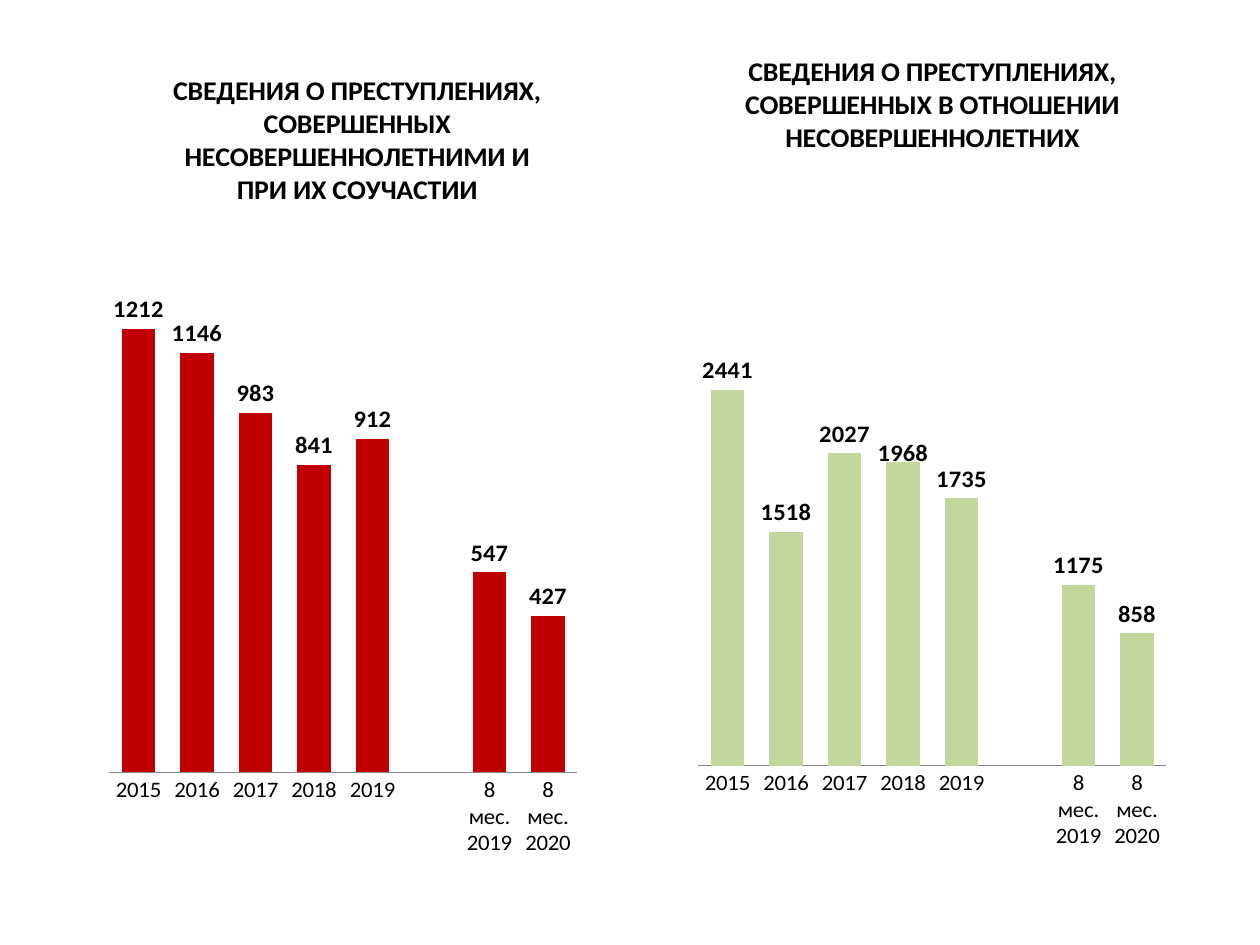
from dataclasses import dataclass
from typing import Optional

from lxml import etree
from pptx import Presentation
from pptx.chart.data import CategoryChartData
from pptx.dml.color import RGBColor
from pptx.enum.chart import XL_CHART_TYPE, XL_LABEL_POSITION, XL_TICK_MARK
from pptx.oxml.ns import qn
from pptx.util import Cm, Pt

COLUMNS = XL_CHART_TYPE.COLUMN_CLUSTERED
OUTSIDE_END = XL_LABEL_POSITION.OUTSIDE_END
NO_TICK = XL_TICK_MARK.NONE

FONT = "Calibri"
COLORS = {"text": "000000", "axis": "868686", "red": "C00000", "green": "C3D69B"}
PERIODS = ["2015", "2016", "2017", "2018", "2019", "", "8 мес. 2019", "8 мес. 2020"]
CHART_WIDTH = 10.21


@dataclass
class CrimeChart:
    title: str
    values: list[Optional[int]]
    color: str
    left: float
    top: float
    height: float
    plot: dict[str, float]
    title_place: Optional[dict[str, float]] = None
    lowered_label: Optional[int] = None


CHARTS = [
    CrimeChart(
        "СВЕДЕНИЯ О ПРЕСТУПЛЕНИЯХ, СОВЕРШЕННЫХ НЕСОВЕРШЕННОЛЕТНИМИ И ПРИ ИХ СОУЧАСТИИ",
        [1212, 1146, 983, 841, 912, None, 547, 427],
        "red", 2.06, 0.74, 16.54,
        {"x": 0.014, "y": 0.282, "w": 0.924, "h": 0.646},
        title_place={"x": 0.13, "y": 0.038},
    ),
    CrimeChart(
        "СВЕДЕНИЯ О ПРЕСТУПЛЕНИЯХ, СОВЕРШЕННЫХ В ОТНОШЕНИИ НЕСОВЕРШЕННОЛЕТНИХ",
        [2441, 1518, 2027, 1968, 1735, None, 1175, 858],
        "green", 13.69, 0.53, 16.61,
        {"x": 0.038, "y": 0.349, "w": 0.924, "h": 0.582},
        lowered_label=3,
    ),
]


def rgb(name: str) -> RGBColor:
    return RGBColor.from_string(COLORS[name])


def style_font(font, size: float, bold: bool = False) -> None:
    font.name = FONT
    font.size = Pt(size)
    font.bold = bold
    font.color.rgb = rgb("text")


def set_layout(parent, index: int, place: dict[str, float], modes: dict[str, str]) -> None:
    for old in parent.findall(qn("c:layout")):
        parent.remove(old)
    layout = etree.Element(qn("c:layout"))
    manual = etree.SubElement(layout, qn("c:manualLayout"))
    for tag, value in {**modes, **place}.items():
        etree.SubElement(manual, qn(f"c:{tag}")).set("val", str(value))
    parent.insert(index, layout)


def add_crime_chart(page, item: CrimeChart) -> None:
    data = CategoryChartData()
    data.categories = PERIODS
    data.add_series("Series 1", item.values)
    frame = page.shapes.add_chart(
        COLUMNS, Cm(item.left), Cm(item.top), Cm(CHART_WIDTH), Cm(item.height), data
    )
    chart = frame.chart
    style_font(chart.font, 18)
    chart.has_legend = False

    chart.has_title = True
    para = chart.chart_title.text_frame.paragraphs[0]
    para.text = item.title
    style_font(para.font, 16, bold=True)

    category_axis = chart.category_axis
    category_axis.major_tick_mark = NO_TICK
    category_axis.format.line.color.rgb = rgb("axis")
    style_font(category_axis.tick_labels.font, 13)
    chart.value_axis.visible = False
    chart.value_axis.has_major_gridlines = False
    chart.value_axis.minimum_scale = 0

    bars = chart.plots[0]
    bars.gap_width = 75
    bars.vary_by_categories = False
    series = bars.series[0]
    series.format.fill.solid()
    series.format.fill.fore_color.rgb = rgb(item.color)
    labels = series.data_labels
    labels.show_value = True
    labels.position = OUTSIDE_END
    style_font(labels.font, 14, bold=True)

    root = chart.element if hasattr(chart, "element") else chart._chartSpace
    edges = {"xMode": "edge", "yMode": "edge"}
    plot_area = next(root.iter(qn("c:plotArea")))
    set_layout(plot_area, 0, item.plot, {"layoutTarget": "inner", **edges})
    if item.title_place:
        set_layout(next(root.iter(qn("c:title"))), 1, item.title_place, edges)
    if item.lowered_label is not None:
        label = series.points[item.lowered_label].data_label
        label.position = OUTSIDE_END
        style_font(label.font, 14, bold=True)
        set_layout(next(root.iter(qn("c:dLbl"))), 1, {"x": 0, "y": 0.013}, {})


def main() -> None:
    deck = Presentation()
    deck.slide_width, deck.slide_height = Cm(25.4), Cm(19.05)
    page = deck.slides.add_slide(deck.slide_layouts[6])
    for item in CHARTS:
        add_crime_chart(page, item)
    deck.save("out.pptx")


if __name__ == "__main__":
    main()
